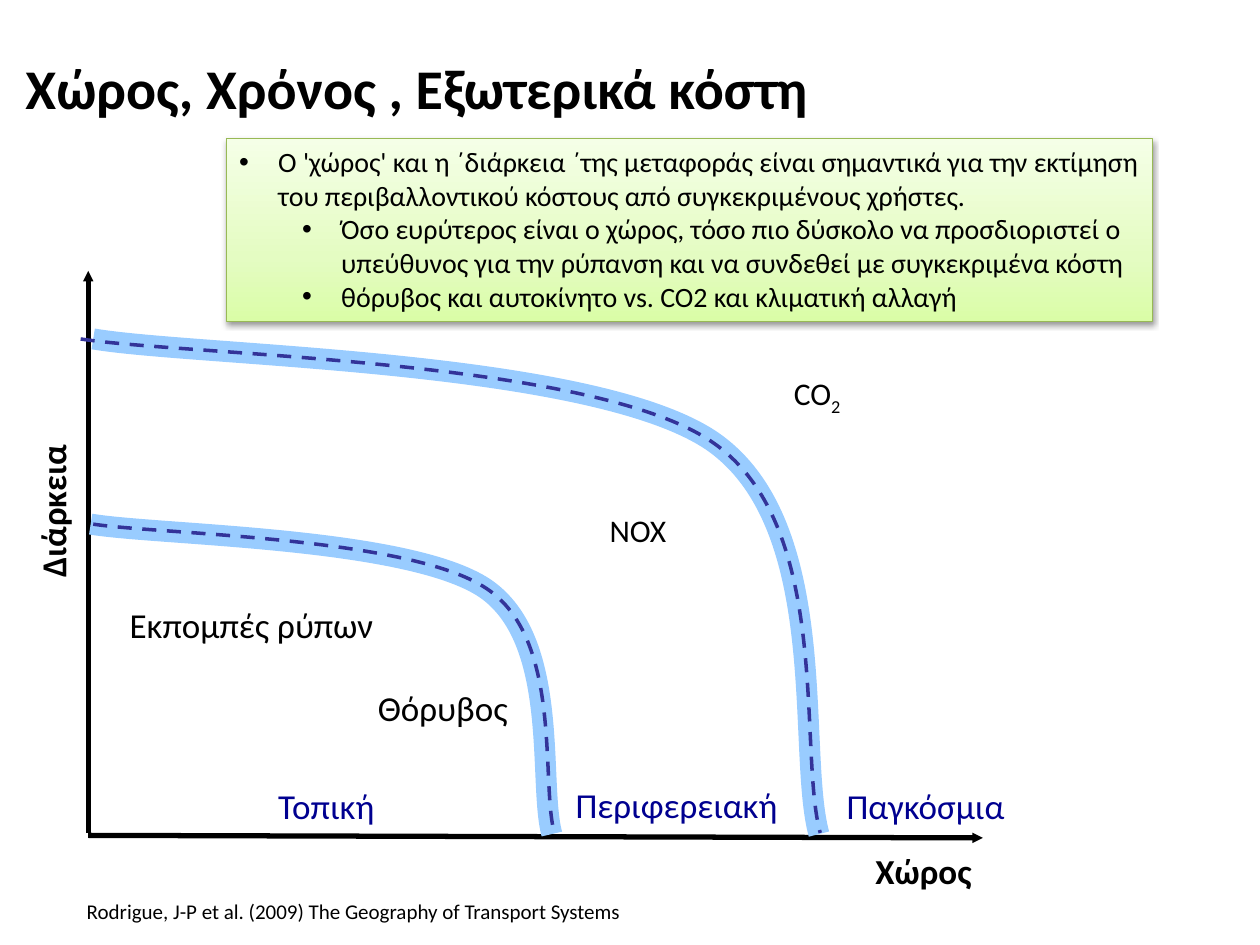
from copy import deepcopy

from lxml import etree
from pptx import Presentation
from pptx.dml.color import RGBColor
from pptx.enum.dml import MSO_LINE
from pptx.enum.shapes import MSO_CONNECTOR, MSO_SHAPE
from pptx.enum.text import MSO_ANCHOR, MSO_AUTO_SIZE, PP_ALIGN
from pptx.oxml.ns import qn
from pptx.util import Inches, Pt

STRAIGHT = MSO_CONNECTOR.STRAIGHT
RECTANGLE = MSO_SHAPE.RECTANGLE
DASH = MSO_LINE.DASH
GROW, FIXED = MSO_AUTO_SIZE.SHAPE_TO_FIT_TEXT, MSO_AUTO_SIZE.NONE
TOP, MIDDLE = MSO_ANCHOR.TOP, MSO_ANCHOR.MIDDLE
LEFT, CENTER = PP_ALIGN.LEFT, PP_ALIGN.CENTER

THEME = {
    "font": "Calibri",
    "black": "000000",
    "zone": "000090",
    "band": "99CCFF",
    "dash": "333399",
    "box_line": "98B955",
    "box_stops": [(0, "DAFDA7"), (0.35, "E4FCC2"), (1, "F5FFE7")],
    "title": 32,
    "label": 20,
    "gas": 18,
    "bullet": 16,
    "source": 12,
}

TITLE = ("Χώρος, Χρόνος , Εξωτερικά κόστη", (0, 0.19, 6.62, 1))
SOURCE = ("Rodrigue, J-P et al. (2009) The Geography of Transport Systems", (0.59, 7.08, 5, 0.3))
DURATION = ("Διάρκεια", (-1.1, 3.84, 3.04, 0.44))
SPACE = ("Χώρος", (6.85, 6.69, 0.97, 0.44))
NOX = (" ΝΟΧ", (4.68, 4.01, 0.71, 0.71))
CO2 = ("CO", (6.13, 2.92, 0.71, 0.4))
ZONES = [
    ("Τοπική", (2.11, 6.18, 1, 0.44)),
    ("Περιφερειακή", (4.47, 6.17, 1.82, 0.44)),
    ("Παγκόσμια", (6.62, 6.18, 1.48, 0.44)),
]
EFFECTS = [
    ("Θόρυβος", (2.9, 5.4, 1.24, 0.44)),
    ("Εκπομπές ρύπων", (0.93, 4.74, 2.16, 0.44)),
]
AXES = [
    ((0.7, 2.15), (0.7, 6.61), "a:headEnd"),
    ((0.7, 6.63), (7.8, 6.65), "a:tailEnd"),
]
ARROW = {"type": "triangle", "w": "sm", "len": "sm"}
CURVES = [
    ("band", [(0.72, 4.16), (1.25, 4.25), (3.24, 4.26), (3.85, 4.67),
              (4.45, 5.08), (4.27, 6.21), (4.38, 6.62)]),
    ("dash", [(0.74, 4.16), (1.26, 4.24), (3.25, 4.26), (3.86, 4.67),
              (4.47, 5.07), (4.29, 6.21), (4.4, 6.61)]),
    ("band", [(0.74, 2.69), (1.56, 2.83), (4.69, 2.85), (5.65, 3.5),
              (6.61, 4.16), (6.32, 5.97), (6.5, 6.62)]),
    ("dash", [(0.64, 2.69), (1.48, 2.82), (4.67, 2.85), (5.64, 3.5),
              (6.62, 4.15), (6.33, 5.96), (6.51, 6.61)]),
]
CURVE_LINES = {
    "band": {"width": Pt(12)},
    "dash": {"width": Pt(2), "dash_style": DASH},
}
BOX = (1.8, 1.1, 7.35, 1.45)
BULLETS = [
    (0, "Ο 'χώρος' και η ΄διάρκεια ΄της μεταφοράς είναι σημαντικά για την εκτίμηση "
        "του περιβαλλοντικού κόστους από συγκεκριμένους χρήστες."),
    (1, "Όσο ευρύτερος είναι ο χώρος, τόσο πιο δύσκολο να προσδιοριστεί ο υπεύθυνος "
        "για την ρύπανση και να συνδεθεί με συγκεκριμένα κόστη"),
    (1, "θόρυβος και αυτοκίνητο vs. CO2 και κλιματική αλλαγή"),
]
SHADOW = {"blurRad": Pt(3.1), "dist": Pt(1.6), "dir": 5400000, "rotWithShape": 0}


def apply(target, **values):
    for name, value in values.items():
        setattr(target, name, value)


def add_xml(parent, tag, **attributes):
    child = etree.SubElement(parent, qn(tag))
    for name, value in attributes.items():
        child.set(name, str(value))
    return child


def add_run(paragraph, text, size, color="black", bold=False):
    run = paragraph.add_run()
    run.text = text
    apply(run.font, name=THEME["font"], size=Pt(size), bold=bold)
    run.font.color.rgb = RGBColor.from_string(THEME[color])
    return run


def add_label(slide, label, size="label", color="black", bold=False,
              wrap=False, align=LEFT, anchor=TOP, fit=GROW):
    text, place = label
    shape = slide.shapes.add_textbox(*map(Inches, place))
    apply(shape.text_frame, word_wrap=wrap, auto_size=fit, vertical_anchor=anchor)
    paragraph = shape.text_frame.paragraphs[0]
    paragraph.alignment = align
    add_run(paragraph, text, THEME[size], color, bold)
    return shape


def add_axis(slide, start, end, arrow_end):
    axis = slide.shapes.add_connector(STRAIGHT, *map(Inches, start + end))
    axis.line.width = Pt(3)
    axis.line.color.rgb = RGBColor.from_string(THEME["black"])
    properties = axis._element.spPr
    add_xml(properties.find(qn("a:ln")), arrow_end, **ARROW)
    add_xml(properties, "a:effectLst")


def add_curve(slide, style, points):
    start, *controls = [tuple(map(Inches, point)) for point in points]
    builder = slide.shapes.build_freeform(*start)
    builder.add_line_segments(controls, close=False)
    curve = builder.convert_to_shape()
    outline = curve._element.spPr.find(".//" + qn("a:path"))
    segments = outline.findall(qn("a:lnTo"))
    for first in range(0, len(segments), 3):
        bezier = add_xml(outline, "a:cubicBezTo")
        for segment in segments[first:first + 3]:
            bezier.append(segment[0])
            outline.remove(segment)
    curve.shadow.inherit = False
    curve.fill.background()
    curve.line.color.rgb = RGBColor.from_string(THEME[style])
    apply(curve.line, **CURVE_LINES[style])


def add_bullet(paragraph, level, text):
    apply(paragraph, level=level, alignment=LEFT)
    add_run(paragraph, text, THEME["bullet"])
    properties = paragraph._p.get_or_add_pPr()
    properties.set("marL", str(Inches(0.31 + 0.5 * level)))
    properties.set("indent", str(Inches(-0.31)))
    add_xml(properties, "a:buFont", typeface="Arial")
    add_xml(properties, "a:buChar", char="•")


def add_box(slide):
    box = slide.shapes.add_shape(RECTANGLE, *map(Inches, BOX))
    box.fill.gradient()
    box.fill.gradient_angle = 90
    stops = box._element.spPr.find(".//" + qn("a:gsLst"))
    stops.append(deepcopy(stops[0]))
    for stop, (position, color) in zip(box.fill.gradient_stops, THEME["box_stops"]):
        stop.position = position
        stop.color.rgb = RGBColor.from_string(color)
    box.line.width = Pt(0.75)
    box.line.color.rgb = RGBColor.from_string(THEME["box_line"])
    box.shadow.inherit = False
    shadow = add_xml(box._element.spPr.find(qn("a:effectLst")), "a:outerShdw", **SHADOW)
    add_xml(add_xml(shadow, "a:srgbClr", val=THEME["black"]), "a:alpha", val=38000)
    frame = box.text_frame
    apply(frame, word_wrap=True, auto_size=GROW, vertical_anchor=TOP)
    for index, (level, text) in enumerate(BULLETS):
        paragraph = frame.add_paragraph() if index else frame.paragraphs[0]
        add_bullet(paragraph, level, text)


def main():
    """Build the slide on space, time and external costs of transport."""
    presentation = Presentation()
    apply(presentation, slide_width=Inches(10), slide_height=Inches(7.5))
    slide = presentation.slides.add_slide(presentation.slide_layouts[6])
    duration = add_label(slide, DURATION, bold=True, wrap=True, align=CENTER)
    duration.rotation = 270
    add_label(slide, NOX, "gas", wrap=True, align=CENTER)
    co2 = add_label(slide, CO2, "gas", wrap=True, align=CENTER)
    subscript = add_run(co2.text_frame.paragraphs[0], "2", THEME["gas"])
    subscript._r.get_or_add_rPr().set("baseline", "-25000")
    for axis in AXES:
        add_axis(slide, *axis)
    for zone in ZONES:
        add_label(slide, zone, color="zone")
    for effect in EFFECTS:
        add_label(slide, effect)
    add_label(slide, SPACE, bold=True)
    for curve in CURVES:
        add_curve(slide, *curve)
    add_label(slide, SOURCE, "source", wrap=True)
    add_label(slide, TITLE, "title", bold=True, wrap=True, align=CENTER,
              anchor=MIDDLE, fit=FIXED)
    add_box(slide)
    presentation.save("out.pptx")


if __name__ == "__main__":
    main()
